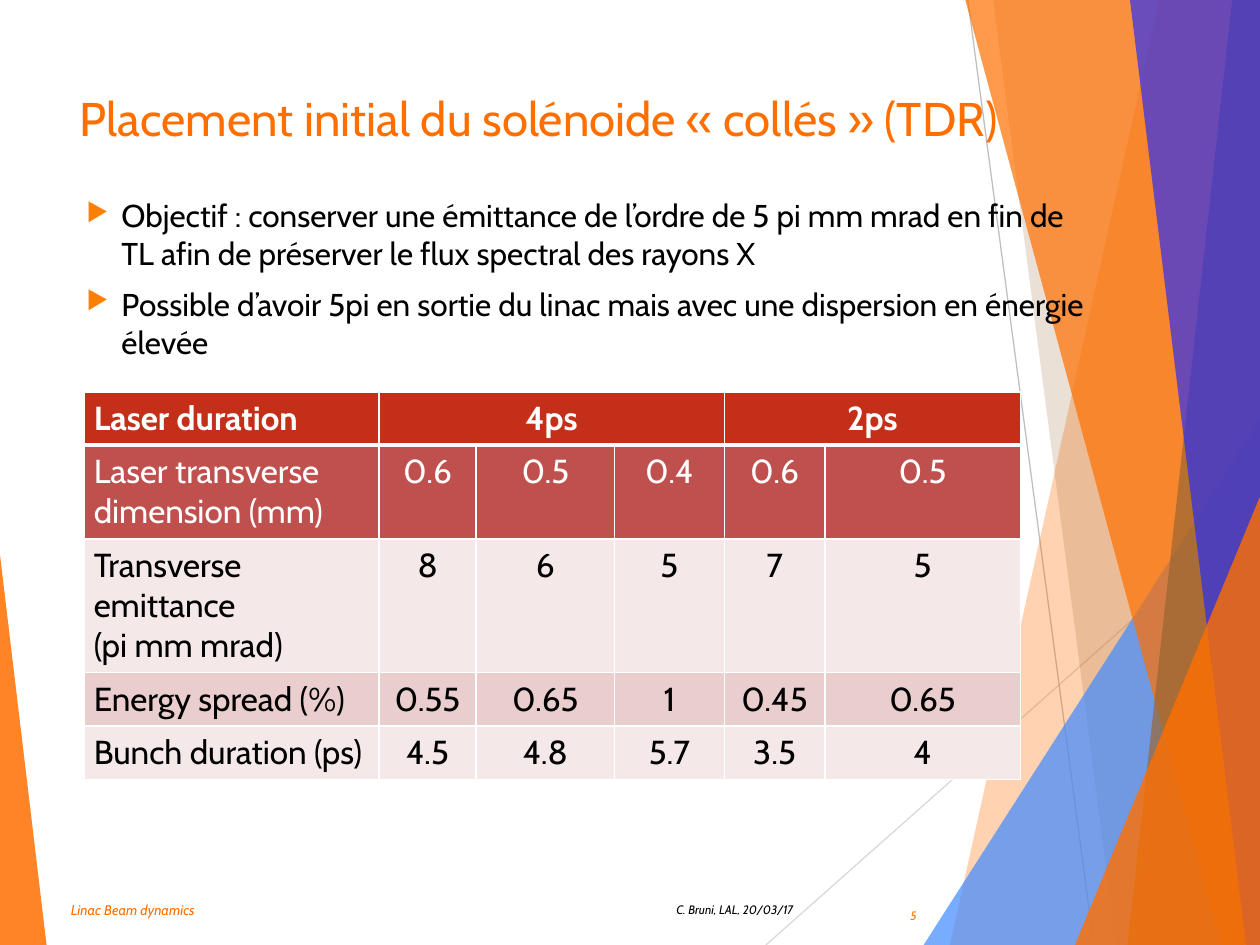
"""Build the slide on the initial solenoid placement with its beam table."""
from dataclasses import dataclass

from lxml.etree import SubElement
from pptx import Presentation
from pptx.dml.color import RGBColor
from pptx.enum.shapes import MSO_CONNECTOR
from pptx.enum.text import MSO_ANCHOR, MSO_AUTO_SIZE, PP_ALIGN
from pptx.oxml.ns import qn
from pptx.util import Cm, Pt

HUES = {
    "orange": "FF6F00", "brown": "996633", "blue": "438CFF", "indigo": "1F29FD",
    "bullet": "FF8000", "black": "000000", "white": "FFFFFF", "pale": "D9D9D9",
    "grey": "BFBFBF", "head": "C42F1A", "red": "C0504D", "light": "F5E8E8",
    "pink": "EACDCD",
}
WIDE, HIGH = 25.4, 19.05


@dataclass
class Ray:
    hue: str
    start: tuple[float, float]
    end: tuple[float, float]


@dataclass
class Facet:
    hue: str
    alpha: int
    points: list[tuple[float, float]]


@dataclass
class Label:
    text: str
    box: tuple[float, float, float, float]
    size: float
    hue: str
    align: PP_ALIGN = PP_ALIGN.LEFT
    anchor: MSO_ANCHOR = MSO_ANCHOR.TOP
    italic: bool = True


@dataclass
class Row:
    height: float
    fill: str
    ink: str
    texts: list[str]


RAYS = [
    Ray("pale", (15.44, HIGH), (25.37, 10.24)),
    Ray("grey", (19.51, 0), (22.05, HIGH)),
]
RIGHT = [(WIDE, HIGH), (WIDE, 0)]
FACETS = [
    Facet("orange", 30, [(23.37, 0), (19.15, HIGH), *RIGHT]),
    Facet("brown", 20, [(20.02, 0), (22.5, HIGH), *RIGHT]),
    Facet("blue", 72, [(18.62, HIGH), (WIDE, 8.46), (WIDE, HIGH)]),
    Facet("orange", 70, [(19.46, 0), (24.61, HIGH), *RIGHT]),
    Facet("brown", 70, [(24.84, 0), (22.73, HIGH), *RIGHT]),
    Facet("indigo", 65, [(22.78, 0), (25.12, HIGH), *RIGHT]),
    Facet("orange", 80, [(21.67, HIGH), (WIDE, 10.01), (WIDE, HIGH)]),
    Facet("orange", 85, [(0, 11.18), (0.94, HIGH), (0, HIGH)]),
]
TITLE = Label("Placement initial du solénoide «\u00a0collés\u00a0» (TDR)",
              (1.42, 1.7, 20.45, 1.93), 27, "orange", italic=False)
BODY = Label("Objectif : conserver une émittance de l’ordre de 5 pi mm mrad en fin de "
             "TL afin de préserver le flux spectral des rayons X\n"
             "Possible d’avoir 5pi en sortie du linac mais avec une dispersion en "
             "énergie élevée", (1.55, 3.86, 20.75, 4.8), 18, "black", italic=False)
NOTES = [
    Label("Linac Beam dynamics", (1.24, 18.08, 5.51, 0.53), 8, "orange"),
    Label("C. Bruni, LAL, 20/03/17", (8.92, 18.08, 7.26, 0.48), 7, "black",
          PP_ALIGN.RIGHT),
    Label("5", (17.5, 18.03, 1.17, 0.86), 7, "orange", PP_ALIGN.RIGHT,
          MSO_ANCHOR.MIDDLE),
]
COLS = [5.94, 1.96, 2.79, 2.21, 2.03, 3.94]
ROWS = [
    Row(1.07, "head", "white", ["Laser duration", "4ps", "", "", "2ps", ""]),
    Row(1.88, "red", "white",
        ["Laser transverse dimension (mm)", "0.6", "0.5", "0.4", "0.6", "0.5"]),
    Row(2.69, "light", "black",
        ["Transverse emittance\n(pi mm mrad)", "8", "6", "5", "7", "5"]),
    Row(1.07, "pink", "black",
        ["Energy spread (%)", "0.55", "0.65", "1", "0.45", "0.65"]),
    Row(1.07, "light", "black",
        ["Bunch duration (ps)", "4.5", "4.8", "5.7", "3.5", "4"]),
]
SPANS = [(1, 3), (4, 5)]


def tint(name: str) -> RGBColor:
    """Return the named colour."""
    return RGBColor.from_string(HUES[name])


def apply(item, **values) -> None:
    """Set every given attribute on the item."""
    for name, value in values.items():
        setattr(item, name, value)


def style(para, size: float, hue: str, **values) -> None:
    """Format the font of a paragraph."""
    apply(para.font, name="Cabin", size=Pt(size), **values)
    para.font.color.rgb = tint(hue)


def trace(slide, ray: Ray) -> None:
    """Draw one thin line."""
    line = slide.shapes.add_connector(
        MSO_CONNECTOR.STRAIGHT, *map(Cm, ray.start + ray.end))
    line.line.color.rgb = tint(ray.hue)
    line.line.width = Pt(0.75)
    SubElement(line._element.spPr, qn("a:effectLst"))


def paint(slide, facet: Facet) -> None:
    """Draw one translucent polygon."""
    first, *rest = [(Cm(x), Cm(y)) for x, y in facet.points]
    pen = slide.shapes.build_freeform(*first)
    pen.add_line_segments(rest, close=True)
    shape = pen.convert_to_shape()
    shape.shadow.inherit = False
    shape.line.fill.background()
    shape.fill.solid()
    shape.fill.fore_color.rgb = tint(facet.hue)
    color = shape._element.spPr.find(qn("a:solidFill"))[0]
    SubElement(color, qn("a:alpha"), val=str(facet.alpha * 1000))


def write(shape, label: Label, bullets: bool = False) -> None:
    """Place a text shape and fill it with its label."""
    left, top, width, height = map(Cm, label.box)
    apply(shape, left=left, top=top, width=width, height=height)
    frame = shape.text_frame
    apply(frame, text=label.text, word_wrap=True, auto_size=MSO_AUTO_SIZE.NONE,
          vertical_anchor=label.anchor, margin_left=Cm(0.19), margin_right=Cm(0.19),
          margin_top=Cm(0.1), margin_bottom=Cm(0.1))
    for rank, para in enumerate(frame.paragraphs):
        para.alignment = label.align
        if bullets:
            mark(para)
        if rank:
            para.space_before = Pt(7.5)
        style(para, label.size, label.hue, italic=label.italic)


def mark(para) -> None:
    """Give a paragraph a hanging triangle bullet."""
    props = para._p.get_or_add_pPr()
    props.set("marL", str(Cm(0.71)))
    props.set("indent", str(-Cm(0.71)))
    color = SubElement(props, qn("a:buClr"))
    SubElement(color, qn("a:srgbClr"), val=HUES["bullet"])
    SubElement(props, qn("a:buSzPct"), val="80000")
    SubElement(props, qn("a:buChar"), char="▶")


def edge(cell, widths: dict[str, int]) -> None:
    """Draw white borders round a cell."""
    props = cell._tc.get_or_add_tcPr()
    for side, width in widths.items():
        line = SubElement(props, qn(f"a:ln{side}"), w=str(Pt(width)))
        fill = SubElement(line, qn("a:solidFill"))
        SubElement(fill, qn("a:srgbClr"), val=HUES["white"])


def tabulate(slide) -> None:
    """Add the table of beam values."""
    table = slide.shapes.add_table(
        len(ROWS), len(COLS), Cm(1.7), Cm(7.9), Cm(sum(COLS)),
        Cm(sum(row.height for row in ROWS))).table
    for col, width in zip(table.columns, COLS):
        col.width = Cm(width)
    for r, row in enumerate(ROWS):
        table.rows[r].height = Cm(row.height)
        for c, text in enumerate(row.texts):
            cell = table.cell(r, c)
            edge(cell, {"L": 1, "R": 1, "T": 3 if r == 1 else 1, "B": 1 if r else 3})
            cell.fill.solid()
            cell.fill.fore_color.rgb = tint(row.fill)
            apply(cell, text=text, margin_left=Cm(0.19), margin_right=Cm(0.19),
                  margin_top=Cm(0.13), margin_bottom=Cm(0.13))
            for para in cell.text_frame.paragraphs:
                para.alignment = PP_ALIGN.CENTER if c else PP_ALIGN.LEFT
                style(para, 19, row.ink, bold=r == 0)
    for first, last in SPANS:
        table.cell(0, first).merge(table.cell(0, last))


def main() -> None:
    """Assemble and save the slide."""
    deck = Presentation()
    apply(deck, slide_width=Cm(WIDE), slide_height=Cm(HIGH))
    slide = deck.slides.add_slide(deck.slide_layouts[5])
    for ray in RAYS:
        trace(slide, ray)
    for facet in FACETS:
        paint(slide, facet)
    title = slide.shapes.title
    slide.shapes._spTree.append(title._element)
    write(title, TITLE)
    for label in [BODY, *NOTES]:
        box = slide.shapes.add_textbox(*map(Cm, label.box))
        write(box, label, bullets=label is BODY)
    tabulate(slide)
    deck.save("out.pptx")


if __name__ == "__main__":
    main()
